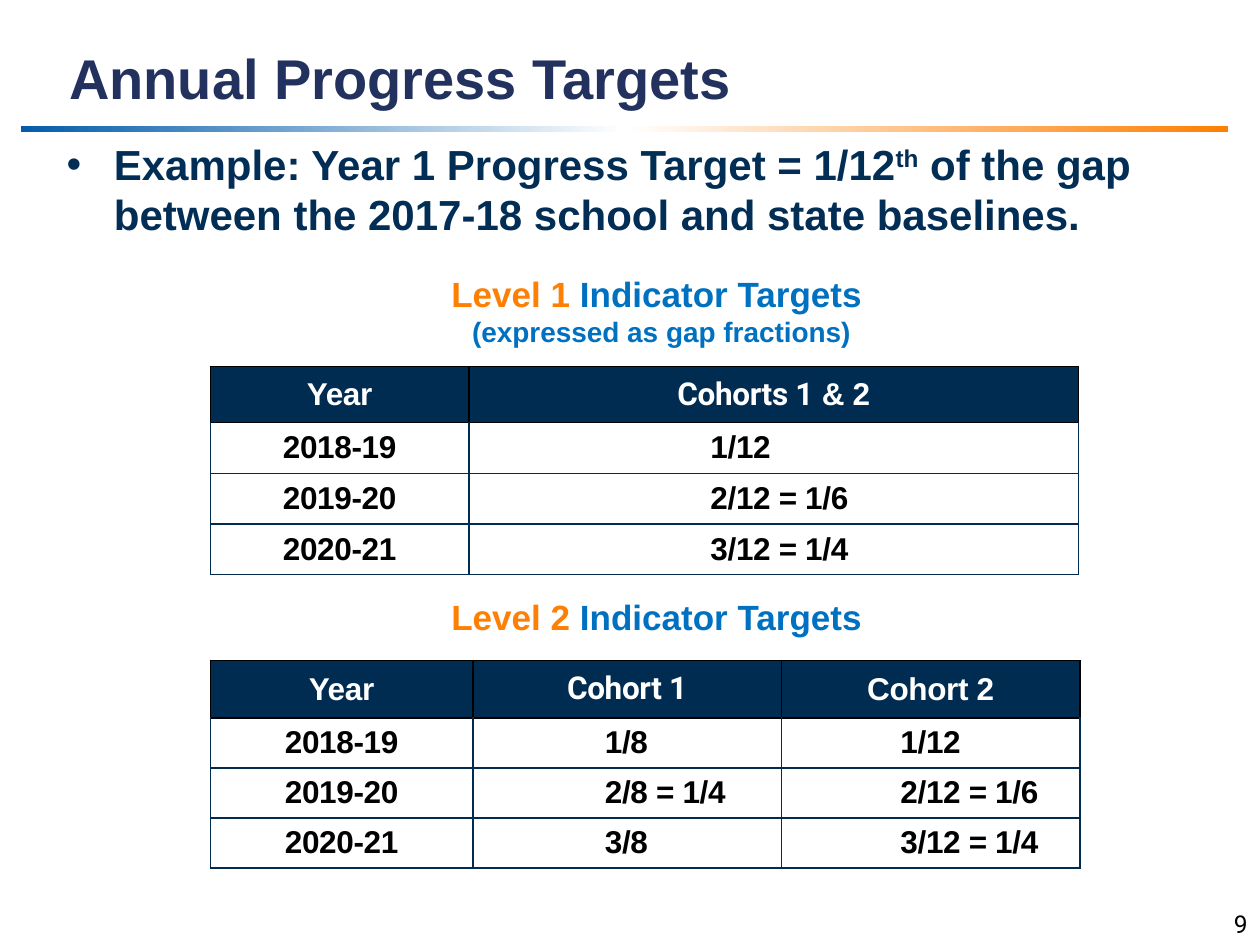
from lxml.etree import SubElement
from pptx import Presentation
from pptx.dml.color import RGBColor
from pptx.enum.shapes import MSO_SHAPE
from pptx.enum.text import MSO_ANCHOR, PP_ALIGN
from pptx.oxml.ns import qn
from pptx.util import Pt

HUES = {
    "title": "22315E", "body": "022E55", "head": "002C51", "edge": "002B4F",
    "blue": "0070C0", "orange": "FD7F03", "bar": "045CAA",
    "white": "FFFFFF", "black": "000000",
}
TITLE = "Annual Progress Targets"
POINT = [
    ("Example: Year 1 Progress Target = 1/12", False),
    ("th", True),
    (" of the gap between the 2017-18 school and state baselines.", False),
]
LEVELS = [
    {"name": "Level 1 ", "note": "(expressed as gap fractions)",
     "top": 152, "high": 51, "grid": 209.5, "cols": [147.8, 348.4],
     "rows": [31.9, 29, 29, 29],
     "head": [[("Year", "Arial")], [("Cohorts 1", "Roboto"), (" & 2", "Arial")]],
     "data": [["2018-19", "1/12"], ["2019-20", "2/12 = 1/6"],
              ["2020-21", "3/12 = 1/4"]],
     "pads": [None, 138]},
    {"name": "Level 2 ", "note": "",
     "top": 337, "high": 31.5, "grid": 377.3, "cols": [150, 176.4, 170.5],
     "rows": [33, 28.6, 28.6, 28.6],
     "head": [[("Year", "Arial")], [("Cohort 1", "Roboto")], [("Cohort 2", "Arial")]],
     "data": [["2018-19", "1/8", "1/12"], ["2019-20", "2/8 = 1/4", "2/12 = 1/6"],
              ["2020-21", "3/8", "3/12 = 1/4"]],
     "pads": [None, 75.5, 68]},
]
GRID_X = 120.2


def rgb(hue):
    return RGBColor.from_string(HUES[hue])


def add_text(para, text, size, hue, face="Arial", bold=True):
    run = para.add_run()
    run.text = text
    font = run.font
    font.size, font.name, font.bold = Pt(size), face, bold
    font.color.rgb = rgb(hue)
    return run


def add_box(slide, x, y, wide, high, wrap=True):
    frame = slide.shapes.add_textbox(Pt(x), Pt(y), Pt(wide), Pt(high)).text_frame
    frame.word_wrap = wrap
    return frame


def add_bar(slide):
    bar = slide.shapes.add_shape(MSO_SHAPE.RECTANGLE, Pt(12), Pt(72), Pt(690), Pt(3.6))
    bar.shadow.inherit = False
    bar.line.fill.background()
    bar.fill.gradient()
    bar.fill.gradient_angle = 0
    stops = bar.fill._fill._gradFill.find(qn("a:gsLst"))
    for stop in list(stops):
        stops.remove(stop)
    for pos, hue in [(0, "bar"), (50, "white"), (100, "orange")]:
        stop = SubElement(stops, qn("a:gs"), pos=str(pos * 1000))
        SubElement(stop, qn("a:srgbClr"), val=HUES[hue])


def add_point(slide):
    para = add_box(slide, 31, 75.6, 657.4, 116.6).paragraphs[0]
    props = para._p.get_or_add_pPr()
    props.set("marL", str(Pt(27)))
    props.set("indent", str(-Pt(27)))
    SubElement(props, qn("a:buFont"), typeface="Arial")
    SubElement(props, qn("a:buChar"), char="•")
    for text, high in POINT:
        run = add_text(para, text, 24, "body")
        if high:
            run._r.get_or_add_rPr().set("baseline", "30000")


def add_edges(cell, edges):
    """Draw the left, right, top and bottom border, each a (hue, width) pair."""
    props = cell._tc.get_or_add_tcPr()
    for side, (hue, width) in zip("LRTB", edges):
        line = SubElement(props, qn("a:ln" + side), w=str(Pt(width)))
        fill = SubElement(line, qn("a:solidFill"))
        SubElement(fill, qn("a:srgbClr"), val=HUES[hue])


def fill_cell(cell, parts, hue, pad, edges):
    cell.vertical_anchor = MSO_ANCHOR.MIDDLE
    cell.margin_left, cell.margin_right = Pt(pad or 5), Pt(5)
    cell.margin_top = cell.margin_bottom = 0
    para = cell.text_frame.paragraphs[0]
    para.alignment = PP_ALIGN.LEFT if pad else PP_ALIGN.CENTER
    for text, face in parts:
        run = add_text(para, text, 18, hue, face)
        run._r.get_or_add_rPr().set("spc", "-20")
    add_edges(cell, edges)


def add_grid(slide, level):
    cols, rows = level["cols"], level["rows"]
    table = slide.shapes.add_table(
        len(rows), len(cols), Pt(GRID_X), Pt(level["grid"]),
        Pt(sum(cols)), Pt(sum(rows))).table
    table.horz_banding = False
    for col, wide in zip(table.columns, cols):
        col.width = Pt(wide)
    for row, high in zip(table.rows, rows):
        row.height = Pt(high)

    thick, thin, dark = ("head", 1), ("edge", 0.75), ("black", 1)
    for c, parts in enumerate(level["head"]):
        cell = table.cell(0, c)
        fill_cell(cell, parts, "white", None, [dark] * 4)
        cell.fill.solid()
        cell.fill.fore_color.rgb = rgb("head")
    for r, texts in enumerate(level["data"], 1):
        for c, text in enumerate(texts):
            cell = table.cell(r, c)
            edges = [thick if c else thin, thick, thin if r > 1 else dark, thin]
            fill_cell(cell, [(text, "Arial")], "black", level["pads"][c], edges)
            cell.fill.background()


def add_level(slide, level):
    para = add_box(slide, 250, level["top"], 256, level["high"], False).paragraphs[0]
    para.alignment = PP_ALIGN.CENTER
    add_text(para, level["name"], 20, "orange")
    add_text(para, "Indicator Targets ", 20, "blue")
    if level["note"]:
        para.add_line_break()
        add_text(para, level["note"], 16, "blue")
    add_grid(slide, level)


def main():
    deck = Presentation()
    deck.slide_width, deck.slide_height = Pt(720), Pt(540)
    slide = deck.slides.add_slide(deck.slide_layouts[6])
    add_bar(slide)
    add_point(slide)

    number = add_box(slide, 552, 516, 168, 24).paragraphs[0]
    number.alignment = PP_ALIGN.RIGHT
    add_text(number, "9", 14, "black", "Roboto", False)

    frame = add_box(slide, 32.4, 0, 607, 67)
    frame.vertical_anchor = MSO_ANCHOR.BOTTOM
    frame.paragraphs[0].line_spacing = Pt(36)
    add_text(frame.paragraphs[0], TITLE, 32, "title")

    for level in LEVELS:
        add_level(slide, level)
    deck.save("out.pptx")


if __name__ == "__main__":
    main()
